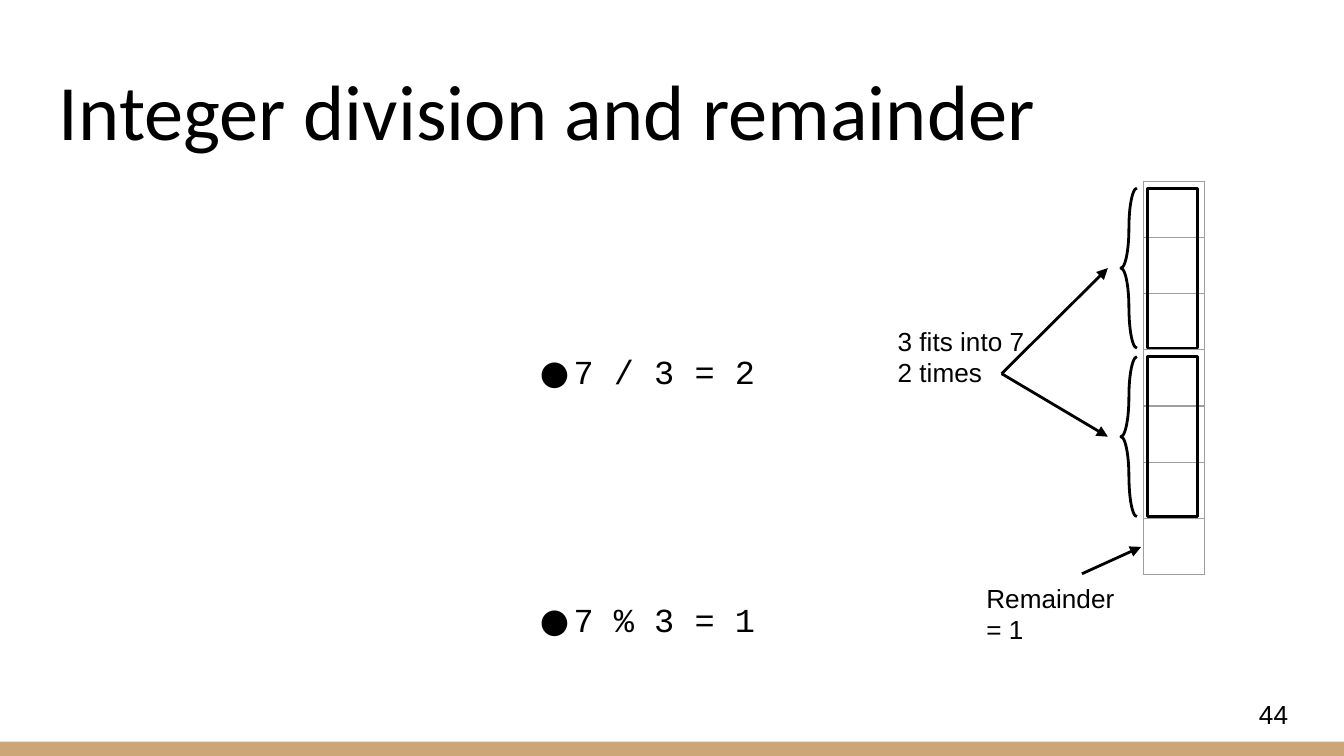
from lxml import etree
from pptx import Presentation
from pptx.dml.color import RGBColor
from pptx.enum.shapes import MSO_CONNECTOR, MSO_SHAPE
from pptx.enum.text import MSO_ANCHOR
from pptx.oxml.ns import qn
from pptx.util import Pt

RECT = MSO_SHAPE.RECTANGLE
BRACE = MSO_SHAPE.LEFT_BRACE
STRAIGHT = MSO_CONNECTOR.STRAIGHT
TOP, MIDDLE, BOTTOM = MSO_ANCHOR.TOP, MSO_ANCHOR.MIDDLE, MSO_ANCHOR.BOTTOM

COLORS = {"ink": "000000", "bar": "CCA677", "grid": "9E9E9E"}
TITLE = {"name": "Calibri", "size": Pt(42)}
CODE = {"name": "Courier New", "size": Pt(18)}
LABEL = {"name": "Arial", "size": Pt(14)}
INSET = 7.2
LINE_WIDTH = 1.5
ROWS, DIVISOR = 7, 3
GRID_LEFT, GRID_TOP, CELL_W, CELL_H = 612.7, 97.2, 32.4, 30.1


def color(name):
    return RGBColor.from_string(COLORS[name])


def add_text(s, box, lines, fmt, anchor=TOP, top_inset=INSET):
    tf = s.shapes.add_textbox(*map(Pt, box)).text_frame
    settings = {"word_wrap": True, "vertical_anchor": anchor,
                "margin_left": Pt(INSET), "margin_right": Pt(INSET),
                "margin_top": Pt(top_inset), "margin_bottom": Pt(INSET)}
    for key, value in settings.items():
        setattr(tf, key, value)
    for i, line in enumerate(lines):
        p = tf.add_paragraph() if i else tf.paragraphs[0]
        r = p.add_run()
        r.text = line
        for key, value in fmt.items():
            setattr(r.font, key, value)
        r.font.color.rgb = color("ink")
    return tf


def add_bullets(s, box, lines, gap):
    tf = add_text(s, box, lines, CODE, top_inset=11.5)
    for p in tf.paragraphs:
        p.line_spacing = 1.15
        p.space_after = Pt(gap)
        pPr = p._p.get_or_add_pPr()
        pPr.set("marL", str(Pt(36)))
        pPr.set("indent", str(Pt(-18)))
        etree.SubElement(pPr, qn("a:buFont")).set("typeface", "Open Sans")
        etree.SubElement(pPr, qn("a:buChar")).set("char", "●")


def add_shape(s, kind, box, fill=None):
    sp = s.shapes.add_shape(kind, *map(Pt, box))
    sp.shadow.inherit = False
    if fill:
        sp.fill.solid()
        sp.fill.fore_color.rgb = color(fill)
        sp.line.fill.background()
    else:
        sp.fill.background()
        sp.line.color.rgb = color("ink")
        sp.line.width = Pt(LINE_WIDTH)
    return sp


def add_arrow(s, start, end):
    c = s.shapes.add_connector(STRAIGHT, *map(Pt, start + end))
    c.line.color.rgb = color("ink")
    c.line.width = Pt(LINE_WIDTH)
    etree.SubElement(c.line._get_or_add_ln(), qn("a:tailEnd")).set("type", "triangle")
    etree.SubElement(c._element.spPr, qn("a:effectLst"))


def add_cell_borders(cell):
    tcPr = cell._tc.get_or_add_tcPr()
    for side in ("lnL", "lnR", "lnT", "lnB"):
        ln = etree.SubElement(tcPr, qn(f"a:{side}"), w=str(Pt(0.75)))
        fill = etree.SubElement(ln, qn("a:solidFill"))
        etree.SubElement(fill, qn("a:srgbClr")).set("val", COLORS["grid"])


def add_unit_column(s):
    box = (GRID_LEFT, GRID_TOP, CELL_W, ROWS * CELL_H)
    table = s.shapes.add_table(ROWS, 1, *map(Pt, box)).table
    table.first_row = table.horz_banding = False
    for row in table.rows:
        row.height = Pt(CELL_H)
        cell = row.cells[0]
        add_cell_borders(cell)
        cell.fill.background()


def add_group_marks(s, index):
    top = GRID_TOP + 3.6 + index * DIVISOR * CELL_H
    height = 85.7
    brace = add_shape(s, BRACE, (600.5, top, 8.6, height))
    brace.adjustments[0] = 9.34
    brace.adjustments[1] = 0.5
    add_shape(s, RECT, (614.9, top, 26.6, height))
    add_arrow(s, (536.6, 200.2), (593.5, top + height / 2))


def main():
    prs = Presentation()
    prs.slide_width, prs.slide_height = Pt(720), Pt(405)
    s = prs.slides.add_slide(prs.slide_layouts[6])
    add_shape(s, RECT, (0, 397.4, 720, 7.6), "bar")
    add_text(s, (24.5, 25.2, 671, 65.5), ["Integer division and remainder"], TITLE, BOTTOM)
    add_bullets(s, (264.2, 173.5, 198, 150.5), ["7 / 3 = 2", "7 % 3 = 1"], 108)
    add_text(s, (667.4, 367.2, 43.2, 31), ["44"], LABEL, MIDDLE)
    add_unit_column(s)
    for index in range(ROWS // DIVISOR):
        add_group_marks(s, index)
    add_arrow(s, (579.6, 307.4), (611.3, 293))
    add_text(s, (521.3, 304.6, 85, 26.6), ["Remainder", "= 1"], LABEL)
    add_text(s, (473.8, 167, 85, 26.6), ["3 fits into 7", "2 times"], LABEL)
    prs.save("out.pptx")


if __name__ == "__main__":
    main()
